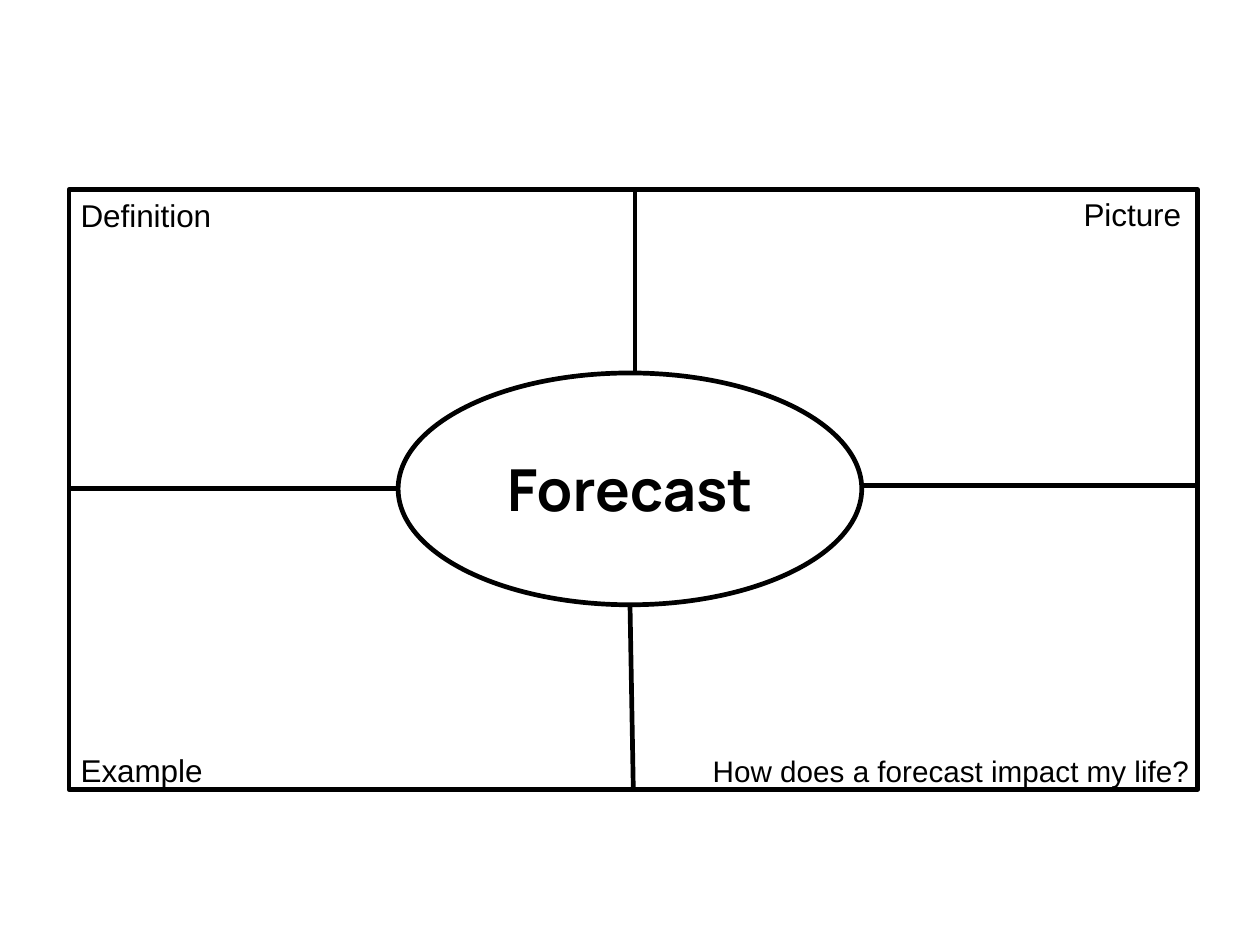
from lxml.etree import SubElement
from pptx import Presentation
from pptx.dml.color import RGBColor
from pptx.enum.shapes import MSO_CONNECTOR as Connector, MSO_SHAPE as Shape
from pptx.enum.text import MSO_ANCHOR as Anchor, PP_ALIGN as Align
from pptx.oxml.ns import qn
from pptx.util import Inches, Pt

BLACK = RGBColor(0x00, 0x00, 0x00)
WHITE = RGBColor(0xFF, 0xFF, 0xFF)

SLIDE_WIDTH = 7.5
SLIDE_HEIGHT = SLIDE_WIDTH * 3 / 4
FRAME = (0.41, 1.13, 6.72, 3.57)
OVAL = (2.37, 2.22, 2.76, 1.38)
TERM_BOX = (2.45, 2.66, 2.6, 0.49)
DIVIDERS = [
    (3.78, 1.13, 3.78, 2.22),
    (3.75, 3.6, 3.77, 4.7),
    (0.41, 2.91, 2.37, 2.91),
    (5.13, 2.89, 7.13, 2.89),
]
LABELS = [
    ("Definition", (0.41, 1.13, 0.94, 0.3), 13.5, Align.LEFT),
    ("Example", (0.41, 4.43, 0.89, 0.3), 13.5, Align.LEFT),
    ("Picture", (6.38, 1.12, 0.74, 0.3), 13.5, Align.LEFT),
    ("How does a forecast impact my life?", (3.84, 4.44, 3.31, 0.29), 12.7, Align.RIGHT),
]


def inches(values):
    return [Inches(value) for value in values]


def style_line(line):
    line.color.rgb = BLACK
    line.width = Pt(2)


def add_outline(slide, preset, box):
    outline = slide.shapes.add_shape(preset, *inches(box))
    outline.shadow.inherit = False
    style_line(outline.line)
    return outline


def add_frame(slide):
    frame = add_outline(slide, Shape.RECTANGLE, FRAME)
    frame.fill.background()


def add_oval(slide):
    oval = add_outline(slide, Shape.OVAL, OVAL)
    oval.fill.solid()
    oval.fill.fore_color.rgb = WHITE
    return oval


def add_divider(slide, ends):
    divider = slide.shapes.add_connector(Connector.STRAIGHT, *inches(ends))
    style_line(divider.line)
    SubElement(divider.element.spPr, qn("a:effectLst"))


def write(frame, text, font_name, size, align, anchor, bold=False):
    frame.word_wrap = True
    frame.vertical_anchor = anchor
    frame.margin_left = frame.margin_right = Inches(0.07)
    frame.margin_top = frame.margin_bottom = Inches(0.04)
    paragraph = frame.paragraphs[0]
    paragraph.alignment = align
    run = paragraph.add_run()
    run.text = text
    run.font.name = font_name
    run.font.size = Pt(size)
    run.font.bold = bold
    run.font.color.rgb = BLACK


def add_label(slide, text, box, size, align):
    label = slide.shapes.add_textbox(*inches(box))
    write(label.text_frame, text, "Arial", size, align, Anchor.TOP)


def place_term(slide, oval):
    term = slide.shapes.title
    term.left, term.top, term.width, term.height = inches(TERM_BOX)
    write(term.text_frame, "Forecast", "Manrope", 24.8, Align.CENTER, Anchor.MIDDLE, bold=True)
    oval.element.addnext(term.element)


def main():
    deck = Presentation()
    deck.slide_width, deck.slide_height = inches((SLIDE_WIDTH, SLIDE_HEIGHT))
    slide = deck.slides.add_slide(deck.slide_layouts[5])
    add_frame(slide)
    for ends in DIVIDERS:
        add_divider(slide, ends)
    oval = add_oval(slide)
    place_term(slide, oval)
    for label in LABELS:
        add_label(slide, *label)
    deck.save("out.pptx")


if __name__ == "__main__":
    main()
